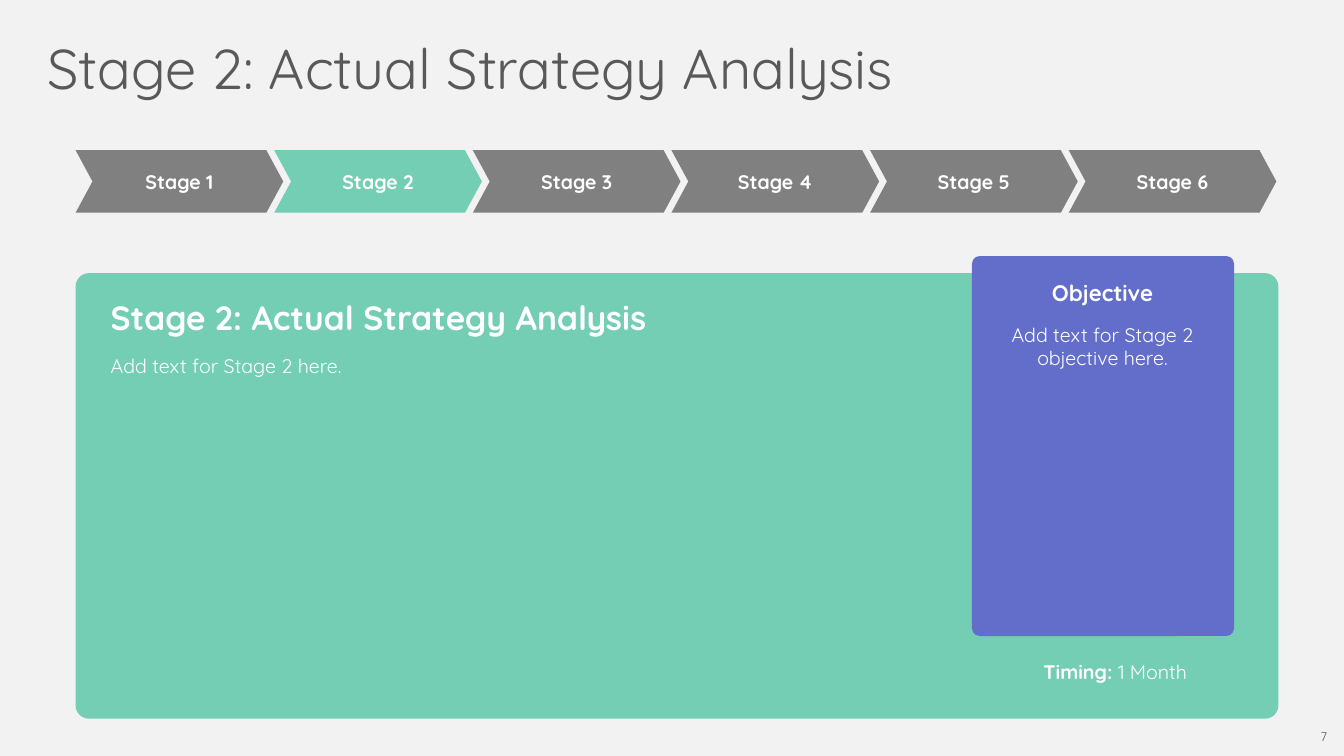
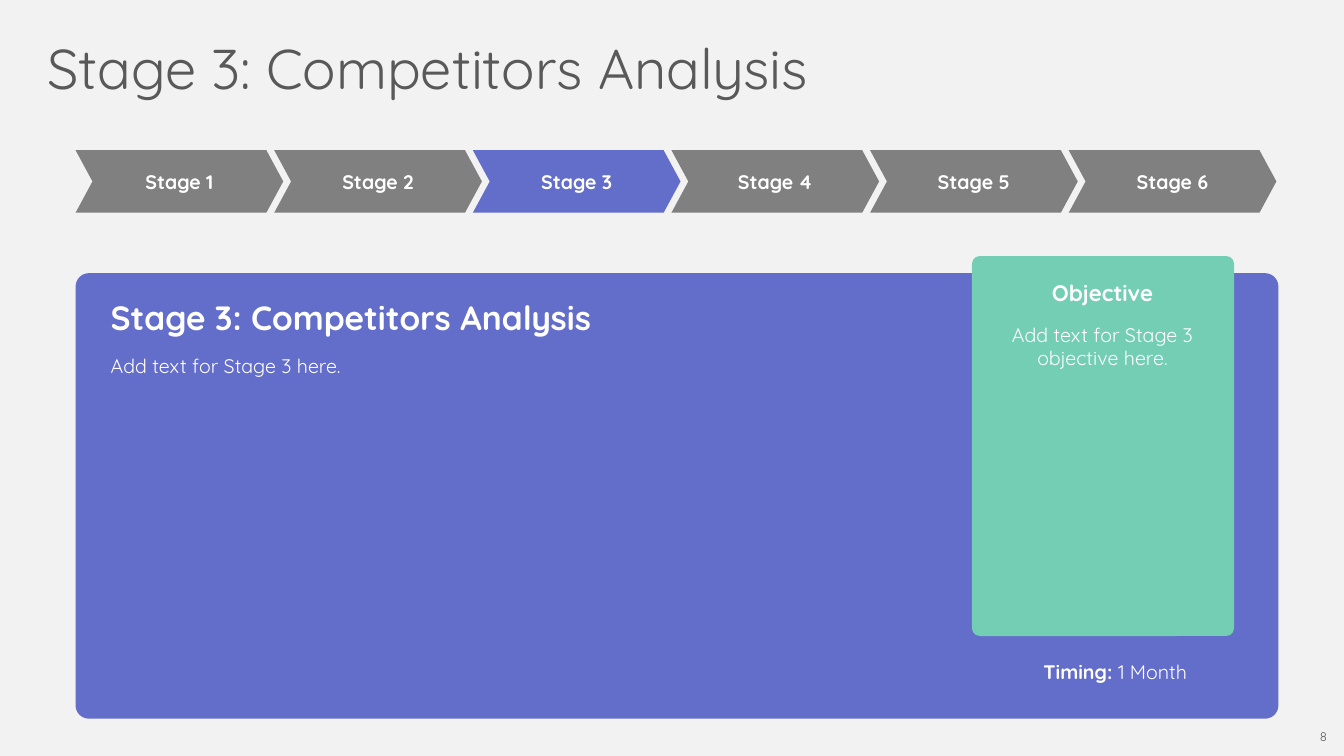
from pptx import Presentation
from pptx.dml.color import RGBColor
from pptx.enum.shapes import MSO_SHAPE
from pptx.enum.text import MSO_ANCHOR, PP_ALIGN
from pptx.util import Inches, Pt

FONT = "Quicksand"
PAPER, INK, WHITE, GRAY = "F2F2F2", "595959", "FFFFFF", "808080"
GREEN, BLUE = "74CEB3", "636DCA"
TITLE = {"size": Pt(40), "bold": False}
PAGE = {"size": Pt(9), "bold": False}
HEADING = {"size": Pt(24), "bold": True}
SUBHEADING = {"size": Pt(16), "bold": True}
LABEL = {"size": Pt(14), "bold": True}
BODY = {"size": Pt(14), "bold": False}
STAGE_COUNT = 6
STAGE_LEFT, STAGE_PITCH = 0.75, 1.97

PAGES = [
    (7, 2, "Actual Strategy Analysis", GREEN, BLUE),
    (8, 3, "Competitors Analysis", BLUE, GREEN),
]


def write(sp, paragraphs, color=WHITE, align=PP_ALIGN.LEFT, anchor=MSO_ANCHOR.TOP):
    tf = sp.text_frame
    tf.word_wrap = True
    tf.vertical_anchor = anchor
    for i, runs in enumerate(paragraphs):
        p = tf.add_paragraph() if i else tf.paragraphs[0]
        p.alignment = align
        p.space_before = Pt(12 if i else 0)
        for text, style in runs:
            r = p.add_run()
            r.text = text
            r.font.name = FONT
            r.font.color.rgb = RGBColor.from_string(color)
            for name, value in style.items():
                setattr(r.font, name, value)


def add_block(s, kind, box, fill, adj):
    sp = s.shapes.add_shape(kind, *map(Inches, box))
    sp.shadow.inherit = False
    sp.adjustments[0] = adj
    sp.fill.solid()
    sp.fill.fore_color.rgb = RGBColor.from_string(fill)
    sp.line.fill.background()
    return sp


prs = Presentation()
prs.slide_width, prs.slide_height = Inches(13.33), Inches(7.5)
bg = prs.slide_master.background.fill
bg.solid()
bg.fore_color.rgb = RGBColor.from_string(PAPER)

for page, stage, topic, main_color, accent in PAGES:
    s = prs.slides.add_slide(prs.slide_layouts[5])
    heading = f"Stage {stage}: {topic}"

    title = s.shapes.title
    title.left, title.top, title.width, title.height = map(Inches, (0.37, 0.28, 11.44, 0.77))
    write(title, [[(heading, TITLE)]], INK)

    for i in range(STAGE_COUNT):
        fill = main_color if i + 1 == stage else GRAY
        box = (STAGE_LEFT + i * STAGE_PITCH, 1.49, 2.06, 0.62)
        sp = add_block(s, MSO_SHAPE.CHEVRON, box, fill, 0.27)
        write(sp, [[(f"Stage {i + 1}", LABEL)]], align=PP_ALIGN.CENTER, anchor=MSO_ANCHOR.MIDDLE)

    add_block(s, MSO_SHAPE.ROUNDED_RECTANGLE, (0.75, 2.71, 11.93, 4.42), main_color, 0.03)
    add_block(s, MSO_SHAPE.ROUNDED_RECTANGLE, (9.64, 2.54, 2.6, 3.77), accent, 0.03)

    objective = [[("Objective", SUBHEADING)], [(f"Add text for Stage {stage} objective here.", BODY)]]
    timing = [[("Timing: ", LABEL), ("1 Month", BODY)]]
    details = [[(heading, HEADING)], [(f"Add text for Stage {stage} here.", BODY)]]
    for box, paragraphs, color, align in [
        ((9.86, 2.72, 2.15, 1.01), objective, WHITE, PP_ALIGN.CENTER),
        ((10.25, 6.5, 1.84, 0.34), timing, WHITE, PP_ALIGN.LEFT),
        ((1, 2.9, 7.93, 0.91), details, WHITE, PP_ALIGN.LEFT),
        ((12.89, 7.18, 0.37, 0.25), [[(str(page), PAGE)]], INK, PP_ALIGN.RIGHT),
    ]:
        write(s.shapes.add_textbox(*map(Inches, box)), paragraphs, color, align)

prs.save("out.pptx")
